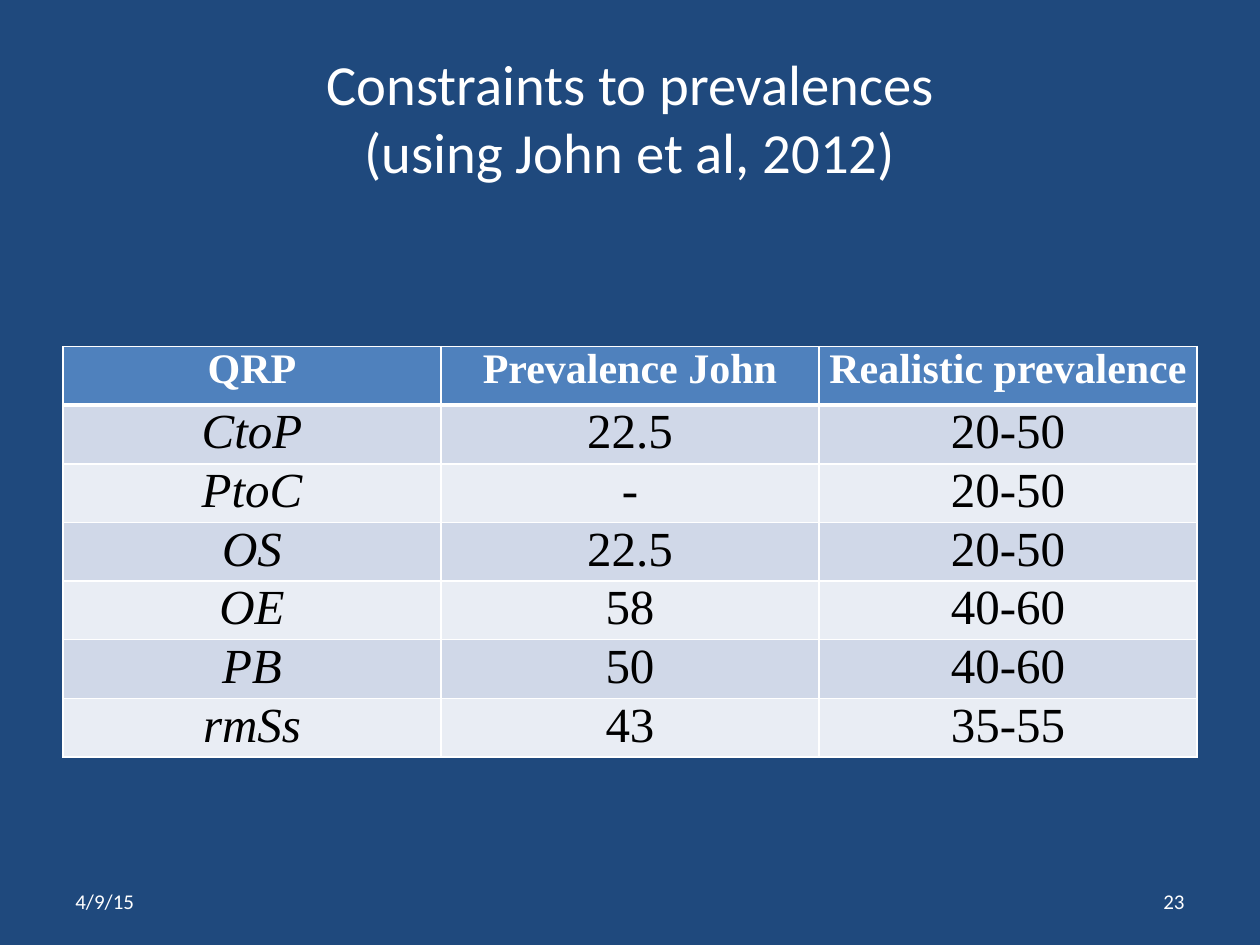
from dataclasses import dataclass

from lxml.etree import SubElement
from pptx import Presentation
from pptx.dml.color import RGBColor
from pptx.enum.text import MSO_ANCHOR as Anchor, PP_ALIGN as Align
from pptx.oxml.ns import qn
from pptx.util import Inches, Pt

WHITE = "FFFFFF"
SERIF = "Times New Roman"
HEAD = ("QRP", "Prevalence John", "Realistic prevalence")
BODY = (
    ("CtoP", "22.5", "20-50"),
    ("PtoC", "-", "20-50"),
    ("OS", "22.5", "20-50"),
    ("OE", "58", "40-60"),
    ("PB", "50", "40-60"),
    ("rmSs", "43", "35-55"),
)


@dataclass
class Note:
    text: str
    left: float
    align: Align


NOTES = (Note("4/9/15", 0.5, Align.LEFT), Note("23", 7.17, Align.RIGHT))


def paint(fill, color: str) -> None:
    fill.solid()
    fill.fore_color.rgb = RGBColor.from_string(color)


def place(shape, left: float, top: float, width: float, height: float) -> None:
    shape.left, shape.top = Inches(left), Inches(top)
    shape.width, shape.height = Inches(width), Inches(height)


def write(frame, text: str, *, size: float, font: str = "Calibri",
          color: str = WHITE, align: Align = Align.CENTER, bold: bool = False,
          italic: bool = False, space: float = 0) -> None:
    para = frame.paragraphs[0]
    para.text = text
    para.alignment = align
    para.space_before = para.space_after = Pt(space)
    for run in para.runs:
        face = run.font
        face.name, face.size = font, Pt(size)
        face.bold, face.italic = bold, italic
        paint(face.fill, color)
    for gap in para._p.findall(qn("a:br")):
        SubElement(gap, qn("a:rPr"), sz=str(round(size * 100)))


def edge(cell, side: str, width: float) -> None:
    props = cell._tc.get_or_add_tcPr()
    line = SubElement(props, qn(f"a:ln{side}"), w=str(Pt(width)))
    fill = SubElement(line, qn("a:solidFill"))
    SubElement(fill, qn("a:srgbClr"), val=WHITE)


def draw_cell(cell, text: str, row: int, col: int) -> None:
    cell.margin_left = cell.margin_right = Inches(0.07)
    cell.margin_top = cell.margin_bottom = 0
    thick = {(0, "B"): 3, (1, "T"): 3}
    for side in "LRTB":
        edge(cell, side, thick.get((row, side), 1))
    if row == 0:
        paint(cell.fill, "4F81BD")
        write(cell.text_frame, text, size=24, font=SERIF, bold=True, space=0.1)
    else:
        paint(cell.fill, "D0D8E8" if row % 2 else "E9EDF4")
        write(cell.text_frame, text, size=28, font=SERIF, color="000000",
              italic=col == 0, space=0.1)


def draw_table(slide) -> None:
    rows = (HEAD, *BODY)
    table = slide.shapes.add_table(
        len(rows), len(HEAD), Inches(0.5), Inches(2.75), Inches(9), Inches(3.26)
    ).table
    for row, texts in enumerate(rows):
        for col, text in enumerate(texts):
            draw_cell(table.cell(row, col), text, row, col)


def draw_note(slide, note: Note) -> None:
    box = slide.shapes.add_textbox(
        Inches(note.left), Inches(6.95), Inches(2.33), Inches(0.4))
    frame = box.text_frame
    frame.word_wrap = True
    frame.vertical_anchor = Anchor.MIDDLE
    write(frame, note.text, size=12, align=note.align)


def main() -> None:
    deck = Presentation()
    deck.slide_width, deck.slide_height = Inches(10), Inches(7.5)
    slide = deck.slides.add_slide(deck.slide_layouts[5])
    paint(slide.background.fill, "1F497D")
    title = slide.shapes.title
    place(title, 0.5, 0.3, 9, 1.25)
    title.text_frame.vertical_anchor = Anchor.MIDDLE
    write(title.text_frame, "Constraints to prevalences\v(using John et al, 2012)",
          size=32.4)
    draw_table(slide)
    for note in NOTES:
        draw_note(slide, note)
    deck.save("out.pptx")


if __name__ == "__main__":
    main()
